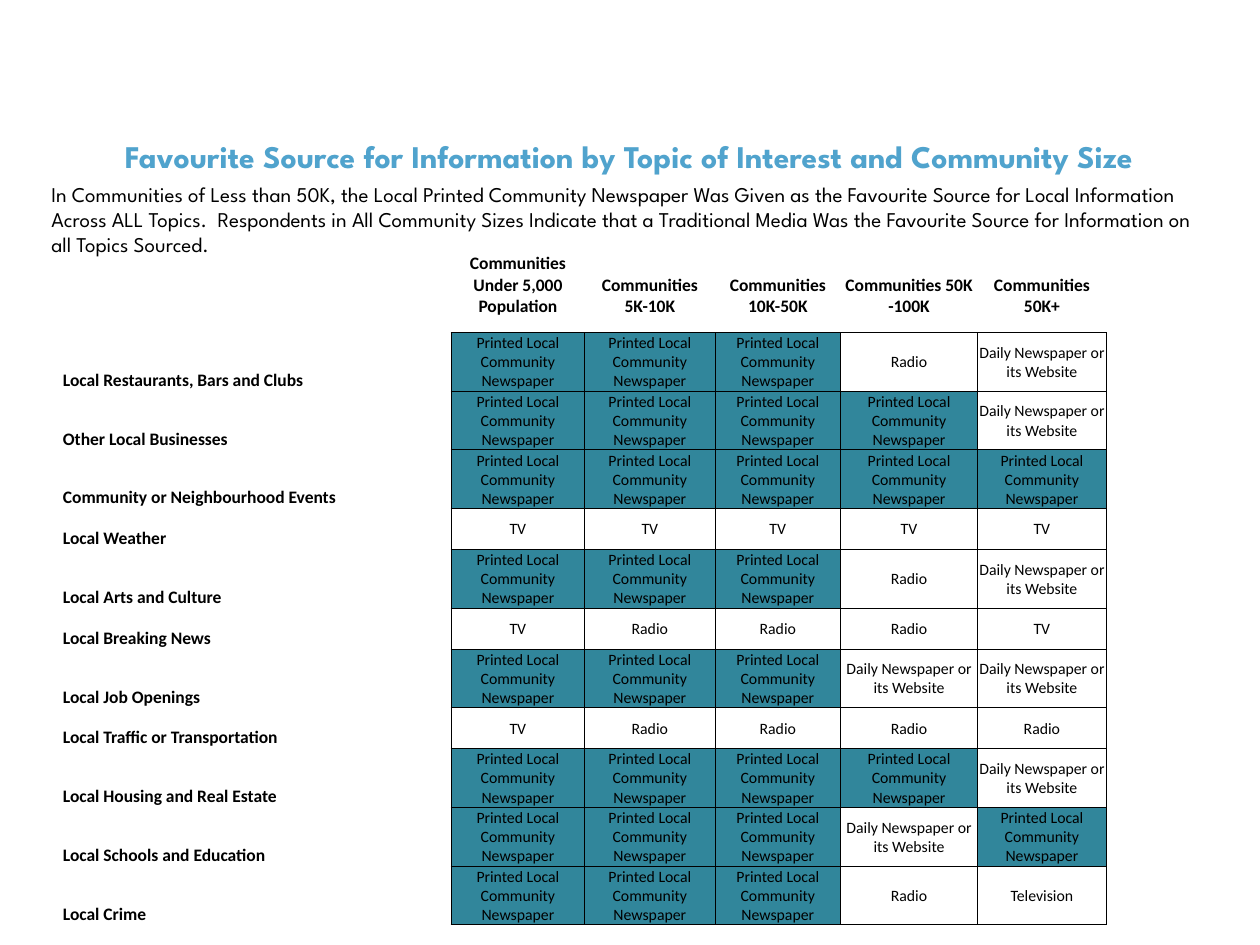
import pptx
import pptx.dml.color
import pptx.enum.text
import pptx.oxml
import pptx.oxml.ns
import pptx.util

Pt = pptx.util.Pt
ALIGN = pptx.enum.text.PP_ALIGN
ANCHOR = pptx.enum.text.MSO_ANCHOR

THEME = {
    "title": {"name": "League Spartan", "size": 18, "bold": True, "color": "50A3CD"},
    "intro": {"name": "League Spartan", "size": 12, "bold": False, "color": "000000"},
    "label": {"name": "Calibri", "size": 10, "bold": True, "color": "000000"},
    "source": {"name": "Calibri", "size": 9, "bold": False, "color": "000000"},
    "highlight": "31869B",
    "border": "000000",
}

TITLE = "Favourite Source for Information by Topic of Interest and Community Size"
INTRO = (
    "In Communities of Less than 50K, the Local Printed Community Newspaper Was Given "
    "as the Favourite Source for Local Information Across ALL Topics.  Respondents in "
    "All Community Sizes Indicate that a Traditional Media Was the Favourite Source for "
    "Information on all Topics Sourced."
)
COMMUNITIES = [
    "Communities Under 5,000 Population",
    "Communities 5K-10K",
    "Communities 10K-50K",
    "Communities 50K -100K",
    "Communities 50K+",
]
PRINTED = "Printed Local Community Newspaper"
DAILY = "Daily Newspaper or its Website"
TOPICS = [
    ("Local Restaurants, Bars and Clubs", [PRINTED] * 3 + ["Radio", DAILY]),
    ("Other Local Businesses", [PRINTED] * 4 + [DAILY]),
    ("Community or Neighbourhood Events", [PRINTED] * 5),
    ("Local Weather", ["TV"] * 5),
    ("Local Arts and Culture", [PRINTED] * 3 + ["Radio", DAILY]),
    ("Local Breaking News", ["TV", "Radio", "Radio", "Radio", "TV"]),
    ("Local Job Openings", [PRINTED] * 3 + [DAILY] * 2),
    ("Local Traffic or Transportation", ["TV"] + ["Radio"] * 4),
    ("Local Housing and Real Estate", [PRINTED] * 4 + [DAILY]),
    ("Local Schools and Education", [PRINTED] * 3 + [DAILY, PRINTED]),
    ("Local Crime", [PRINTED] * 3 + ["Radio", "Television"]),
]

TABLE_LEFT, TABLE_TOP = 35.3, 144
COLUMN_WIDTHS = [222.5, 76.3, 74.5, 71.8, 78.2, 73.7]
HEADER_HEIGHT, SPACER_HEIGHT = 37.2, 8.8
TALL_ROW, SHORT_ROW = 32.6, 23.4
CELL_MARGINS = {"margin_left": 0.7, "margin_right": 0.7, "margin_top": 0.7, "margin_bottom": 0}


def rgb(value):
    return pptx.dml.color.RGBColor.from_string(value)


def write(p, text, style, align):
    p.alignment = align
    r = p.add_run()
    r.text = text
    values = {"name": style["name"], "size": Pt(style["size"]), "bold": style["bold"]}
    for name, value in values.items():
        setattr(r.font, name, value)
    r.font.color.rgb = rgb(style["color"])


def add_text(slide, box, text, style, align):
    tf = slide.shapes.add_textbox(*map(Pt, box)).text_frame
    tf.word_wrap = True
    write(tf.paragraphs[0], text, style, align)


def set_borders(cell, sides):
    """Draw the named sides (L, R, T, B) and clear the others."""
    tc_pr = cell._tc.get_or_add_tcPr()
    for side in "LRTB":
        if side in sides:
            paint = f'<a:solidFill><a:srgbClr val="{THEME["border"]}"/></a:solidFill>'
        else:
            paint = "<a:noFill/>"
        tc_pr.append(pptx.oxml.parse_xml(
            f'<a:ln{side} {pptx.oxml.ns.nsdecls("a")} w="{Pt(0.5)}">{paint}</a:ln{side}>'))


def format_cell(cell, text, style, align, anchor, sides, fill=None):
    for name, value in CELL_MARGINS.items():
        setattr(cell, name, Pt(value))
    cell.vertical_anchor = anchor
    set_borders(cell, sides)
    if fill:
        cell.fill.solid()
        cell.fill.fore_color.rgb = rgb(fill)
    else:
        cell.fill.background()
    p = cell.text_frame.paragraphs[0]
    if text:
        write(p, text, style, align)
    else:  # a small end mark keeps an empty row from growing
        p._p.append(pptx.oxml.parse_xml(
            f'<a:endParaRPr {pptx.oxml.ns.nsdecls("a")} sz="400"/>'))


def add_source_table(slide):
    rows = [("", COMMUNITIES), ("", [""] * len(COMMUNITIES))] + TOPICS
    heights = [HEADER_HEIGHT, SPACER_HEIGHT]
    heights += [TALL_ROW if PRINTED in sources else SHORT_ROW for _, sources in TOPICS]
    frame = slide.shapes.add_table(
        len(rows), len(COLUMN_WIDTHS), Pt(TABLE_LEFT), Pt(TABLE_TOP),
        Pt(sum(COLUMN_WIDTHS)), Pt(sum(heights)))
    table = frame.table
    table.first_row = table.horz_banding = False
    for column, width in zip(table.columns, COLUMN_WIDTHS):
        column.width = Pt(width)
    for i, (label, sources) in enumerate(rows):
        table.rows[i].height = Pt(heights[i])
        is_topic = i > 1
        format_cell(table.cell(i, 0), label, THEME["label"], ALIGN.LEFT,
                    ANCHOR.BOTTOM, "R" if is_topic else "")
        for j, source in enumerate(sources, 1):
            cell = table.cell(i, j)
            if is_topic:
                format_cell(cell, source, THEME["source"], ALIGN.CENTER, ANCHOR.MIDDLE,
                            "LRTB", THEME["highlight"] if source == PRINTED else None)
            else:
                format_cell(cell, source, THEME["label"], ALIGN.CENTER, ANCHOR.BOTTOM,
                            "B" if i == 1 else "")


def main():
    prs = pptx.Presentation()
    prs.slide_width, prs.slide_height = Pt(720), Pt(540)
    slide = prs.slides.add_slide(prs.slide_layouts[6])
    add_source_table(slide)
    add_text(slide, (11.5, 75, 696, 51), TITLE, THEME["title"], ALIGN.CENTER)
    add_text(slide, (22.3, 100, 667.5, 51), INTRO, THEME["intro"], ALIGN.LEFT)
    prs.save("out.pptx")


if __name__ == "__main__":
    main()
